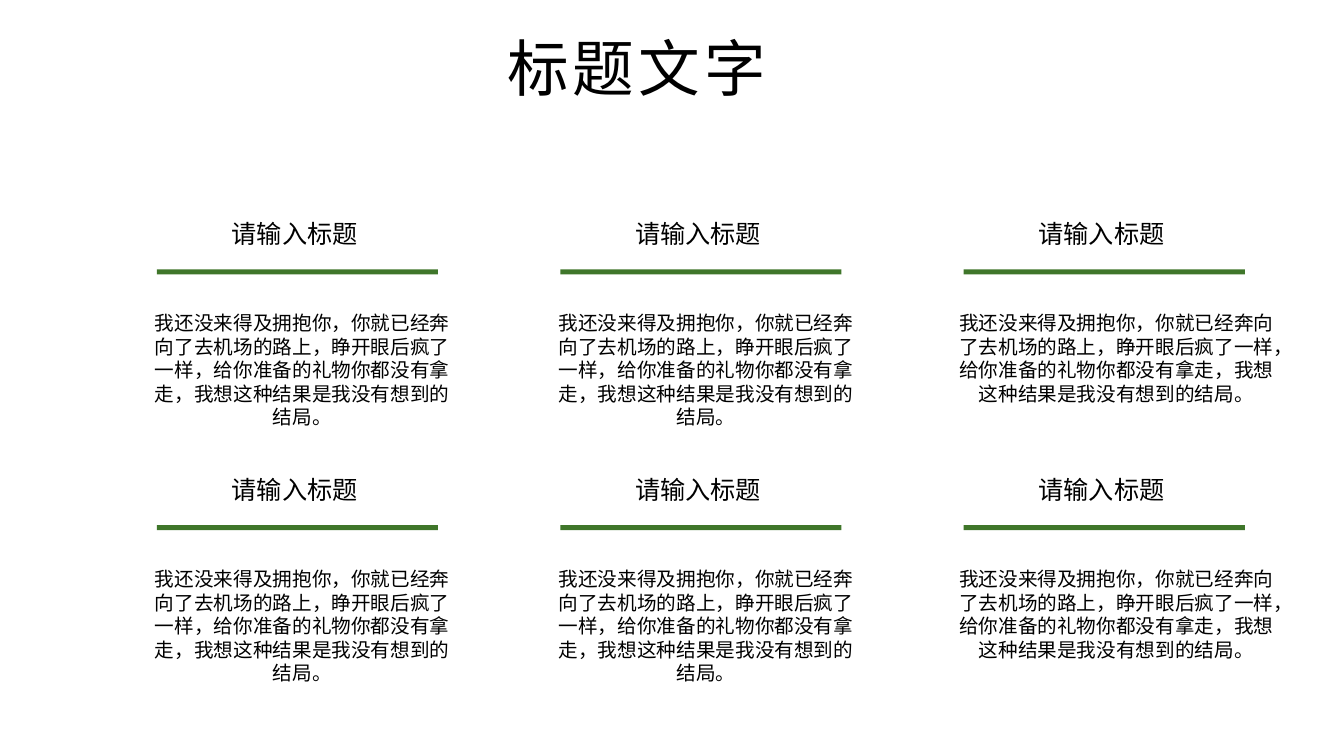
from pptx import Presentation
from pptx.dml.color import RGBColor
from pptx.enum import shapes, text
from pptx.util import Pt

TITLE = "标题文字"
HEADING = "请输入标题"
BODY = ("我还没来得及拥抱你，你就已经奔向了去机场的路上，睁开眼后疯了一样，"
        "给你准备的礼物你都没有拿走，我想这种结果是我没有想到的结局。")
BODY_SIZES = [(237.6, 92.2), (238, 92.2), (247.7, 74.9)]
ROWS = 2

BLACK = RGBColor(0x00, 0x00, 0x00)
GREEN = RGBColor(0x3F, 0x76, 0x2A)

LEFT, TOP = 97.2, 152.6
COLUMN_STEP, ROW_STEP = 288.2, 182.7


def write(shape, content, size, font="Arial", align=text.PP_ALIGN.LEFT,
          wrap=True, spacing=None):
    frame = shape.text_frame
    frame.word_wrap = wrap
    frame.auto_size = text.MSO_AUTO_SIZE.SHAPE_TO_FIT_TEXT
    frame.vertical_anchor = text.MSO_ANCHOR.TOP
    paragraph = frame.paragraphs[0]
    paragraph.alignment = align
    run = paragraph.add_run()
    run.text = content
    run.font.name = font
    run.font.size = Pt(size)
    run.font.color.rgb = BLACK
    if spacing:
        run.font._element.set("spc", str(spacing * 100))


def add_card(slide, left, top, body_width, body_height):
    heading = slide.shapes.add_textbox(Pt(left + 61.2), Pt(top), Pt(105.1), Pt(28.8))
    write(heading, HEADING, 18, wrap=False)
    body = slide.shapes.add_textbox(Pt(left), Pt(top + 66.1), Pt(body_width), Pt(body_height))
    write(body, BODY, 14, align=text.PP_ALIGN.CENTER)
    rule = slide.shapes.add_shape(shapes.MSO_SHAPE.RECTANGLE, Pt(left + 14.8),
                                  Pt(top + 39.8), Pt(200.9), Pt(3.6))
    rule.shadow.inherit = False
    rule.fill.solid()
    rule.fill.fore_color.rgb = GREEN
    rule.line.fill.background()


def main():
    presentation = Presentation()
    presentation.slide_width, presentation.slide_height = Pt(960), Pt(540)
    slide = presentation.slides.add_slide(presentation.slide_layouts[5])
    title = slide.shapes.title
    title.left, title.top, title.width, title.height = Pt(355), Pt(18), Pt(229.7), Pt(60.5)
    write(title, TITLE, 44, font="Noto Sans CJK JP", spacing=3)
    for row in range(ROWS):
        for column, (width, height) in enumerate(BODY_SIZES):
            add_card(slide, LEFT + column * COLUMN_STEP, TOP + row * ROW_STEP, width, height)
    presentation.save("out.pptx")


if __name__ == "__main__":
    main()
